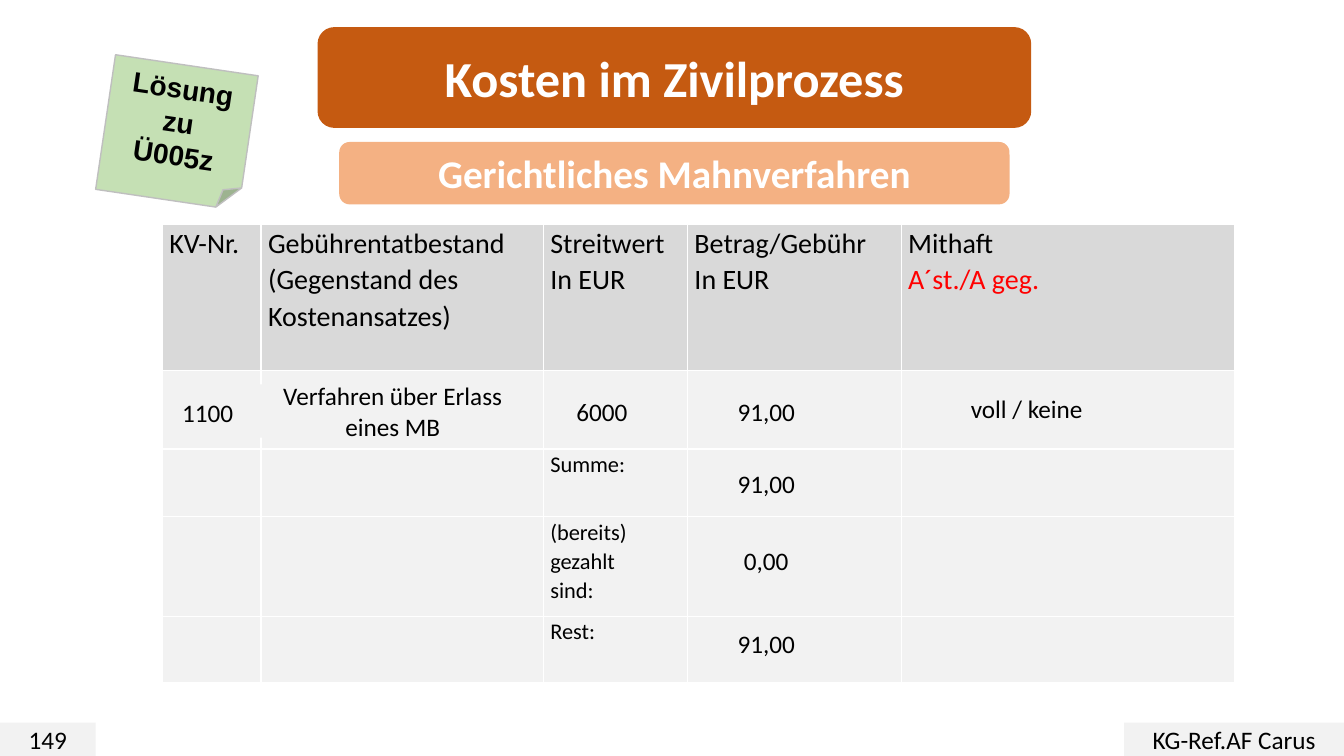
from lxml.etree import SubElement
from pptx import Presentation
from pptx.dml.color import RGBColor
from pptx.enum.shapes import MSO_SHAPE
from pptx.enum.text import MSO_ANCHOR, PP_ALIGN
from pptx.oxml.ns import qn
from pptx.util import Pt

BLACK, WHITE, RED = "000000", "FFFFFF", "FF0000"
LIGHT_GREY, HEADER_GREY = "F2F2F2", "D9D9D9"

COLUMN_WIDTHS = [70.5, 201.6, 103, 152.6, 238.4]
ROW_HEIGHTS = [104.5, 56.2, 48.5, 71.3, 47.5]
HEADERS = [
    ["KV-Nr."],
    ["Gebührentatbestand", "(Gegenstand des Kostenansatzes)"],
    ["Streitwert", "In EUR"],
    ["Betrag/Gebühr", "In EUR"],
    ["Mithaft", "A´st./A geg."],
]
# Row number: lines in the "Streitwert" column
SUM_LABELS = {2: ["Summe:"], 3: ["(bereits)", "gezahlt", "sind:"], 4: ["Rest:"]}
# Text, left and top within the table, width
ENTRIES = [
    ("1100", 4.3, 115.2, 56.2),
    ("Verfahren über Erlass eines MB", 69.1, 114.5, 190.8),
    ("6000", 285.8, 114.5, 56.2),
    ("91,00", 403.2, 114.5, 56.2),
    ("voll / keine", 564.5, 113, 105.8),
    ("91,00", 403.2, 166.3, 56.2),
    ("0,00", 403.2, 221, 56.2),
    ("91,00", 403.2, 280.8, 56.2),
]


def color(value):
    return RGBColor.from_string(value)


def write(frame, lines, size, text_color=BLACK, font="Calibri", bold=False,
          align=PP_ALIGN.LEFT, spacing=None):
    for index, line in enumerate(lines):
        para = frame.paragraphs[0] if index == 0 else frame.add_paragraph()
        para.text = line
        para.alignment = align
        para.line_spacing = spacing
        para.font.name, para.font.size, para.font.bold = font, Pt(size), bold
        para.font.color.rgb = color(text_color)


def add_panel(page, box, lines, fill, size, kind=MSO_SHAPE.RECTANGLE, **style):
    panel = page.shapes.add_shape(kind, *[Pt(length) for length in box])
    panel.shadow.inherit = False
    panel.fill.solid()
    panel.fill.fore_color.rgb = color(fill)
    panel.line.fill.background()
    panel.text_frame.word_wrap = True
    panel.text_frame.vertical_anchor = MSO_ANCHOR.MIDDLE
    write(panel.text_frame, lines, size, align=PP_ALIGN.CENTER, **style)
    return panel


def add_titles(page, left, top, width):
    rounded = MSO_SHAPE.ROUNDED_RECTANGLE
    inset = 15.5
    add_panel(page, (left, top, width, 72), ["Kosten im Zivilprozess"], "C55A11", 36,
              rounded, text_color=WHITE, bold=True)
    add_panel(page, (left + inset, top + 82, width - 2 * inset, 44.6),
              ["Gerichtliches Mahnverfahren"], "F4B183", 28,
              rounded, text_color=WHITE, bold=True)


def add_note(page, box):
    note = add_panel(page, box, ["Lösung zu", "Ü005z"], "C5E0B4", 20,
                     MSO_SHAPE.FOLDED_CORNER, font="Arial", bold=True)
    note.rotation = 8.4
    note.line.color.rgb = color("BFBFBF")
    note.line.width = Pt(1)


def style_cell(cell, fill):
    cell.margin_left = cell.margin_right = Pt(5)
    cell.margin_top = cell.margin_bottom = 0
    # Borders come before the fill in the cell properties
    properties = cell._tc.get_or_add_tcPr()
    for side in ("a:lnL", "a:lnR", "a:lnT", "a:lnB"):
        border = SubElement(properties, qn(side), w=str(Pt(1)))
        solid = SubElement(border, qn("a:solidFill"))
        SubElement(solid, qn("a:srgbClr"), val=WHITE)
    cell.fill.solid()
    cell.fill.fore_color.rgb = color(fill)


def add_cost_table(page, left, top):
    table = page.shapes.add_table(
        len(ROW_HEIGHTS), len(COLUMN_WIDTHS), Pt(left), Pt(top),
        Pt(sum(COLUMN_WIDTHS)), Pt(sum(ROW_HEIGHTS))).table
    table.horz_banding = False
    for column, width in zip(table.columns, COLUMN_WIDTHS):
        column.width = Pt(width)
    for index, (row, height) in enumerate(zip(table.rows, ROW_HEIGHTS)):
        row.height = Pt(height)
        for cell in row.cells:
            style_cell(cell, HEADER_GREY if index == 0 else LIGHT_GREY)

    # Header and sum labels
    for index, lines in enumerate(HEADERS):
        write(table.cell(0, index).text_frame, lines, 20, spacing=1.07)
    liability = table.cell(0, 4).text_frame.paragraphs[1]
    liability.font.color.rgb = color(RED)
    for index, lines in SUM_LABELS.items():
        write(table.cell(index, 2).text_frame, lines, 16, spacing=1.07)

    # Solution entries laid over the cells
    for text, x, y, width in ENTRIES:
        add_panel(page, (left + x, top + y, width, 38.2), [text], LIGHT_GREY, 18)


def add_footer(page, width, bottom):
    height, number_width, author_width = 23.8, 68.4, 157
    top = bottom - height
    add_panel(page, (0, top, number_width, height), ["149"], LIGHT_GREY, 18)
    add_panel(page, (width - author_width, top, author_width, height),
              ["KG-Ref.AF Carus"], LIGHT_GREY, 18)


def main():
    deck = Presentation()
    deck.slide_width, deck.slide_height = Pt(960), Pt(540)
    page = deck.slides.add_slide(deck.slide_layouts[6])
    add_titles(page, 226.8, 19.4, 509.8)
    add_footer(page, 960, 540)
    add_note(page, (74.9, 46.1, 103, 97.2))
    add_cost_table(page, 116, 160)
    deck.save("out.pptx")


if __name__ == "__main__":
    main()
